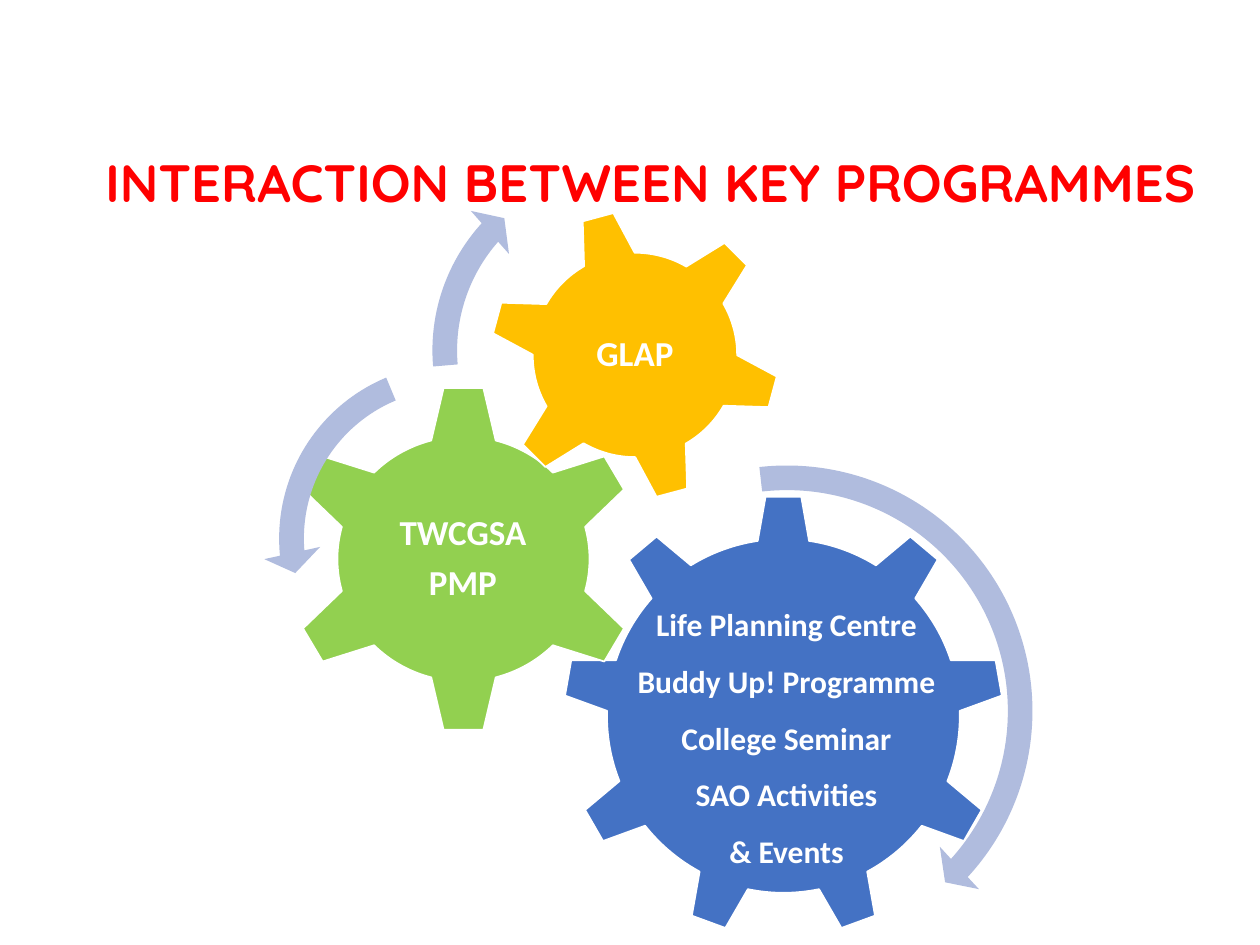
from pptx import Presentation
from pptx.dml.color import RGBColor
from pptx.enum.shapes import MSO_SHAPE as Preset
from pptx.enum.text import MSO_ANCHOR as Anchor, PP_ALIGN as Align
from pptx.util import Emu, Pt

EMU_PER_PX = 914400 / 126
ADJUSTMENT_PER_DEGREE = 0.6
WHITE = "FFFFFF"
RED = "FF0000"
BLUE = "4472C4"
GREEN = "92D050"
GOLD = "FFC000"
LAVENDER = "B0BCDE"


def px(length):
    return Emu(round(length * EMU_PER_PX))


def color(hex_value):
    return RGBColor.from_string(hex_value)


class GearSlide:
    def __init__(self, deck, font="Calibri"):
        self.slide = deck.slides.add_slide(deck.slide_layouts[6])
        self.font = font

    def preset(self, kind, box, fill):
        shape = self.slide.shapes.add_shape(kind, *map(px, box))
        shape.shadow.inherit = False
        shape.fill.solid()
        shape.fill.fore_color.rgb = color(fill)
        return shape

    def gear(self, kind, box, fill, rotation=0):
        gear = self.preset(kind, box, fill)
        gear.line.color.rgb = color(WHITE)
        gear.line.width = Pt(1)
        gear.rotation = rotation

    def arrow(self, kind, box, band, head_angle, end, start, head):
        arrow = self.preset(kind, box, LAVENDER)
        arrow.line.fill.background()
        angles = [angle * ADJUSTMENT_PER_DEGREE for angle in (head_angle, end, start)]
        for index, value in enumerate([band / 100, *angles, head / 100]):
            arrow.adjustments[index] = value

    def text(self, box, lines, size, fill=WHITE, font=None, align=Align.CENTER,
             spacing=0.9, after=0, inset=None):
        frame = self.slide.shapes.add_textbox(*map(px, box)).text_frame
        frame.word_wrap = True
        frame.vertical_anchor = Anchor.MIDDLE
        if inset is not None:
            frame.margin_left = frame.margin_right = px(inset)
            frame.margin_top = frame.margin_bottom = px(inset)
        for index, line in enumerate(lines):
            paragraph = frame.add_paragraph() if index else frame.paragraphs[0]
            paragraph.alignment = align
            paragraph.line_spacing = spacing
            paragraph.space_after = Pt(after)
            run = paragraph.add_run()
            run.text = line
            run.font.name = font or self.font
            run.font.size = Pt(size)
            run.font.bold = True
            run.font.color.rgb = color(fill)

    def gear_label(self, box, lines):
        self.text(box, lines, 20, after=7, inset=4)


def main():
    deck = Presentation()
    deck.slide_width, deck.slide_height = px(1260), px(945)
    page = GearSlide(deck)

    page.gear(Preset.GEAR_9, (563, 495, 441, 442), BLUE)
    page.gear(Preset.GEAR_6, (285, 384, 357, 350), GREEN)
    page.gear_label((374, 473, 178, 173), ["TWCGSA", "PMP"])
    page.gear(Preset.GEAR_6, (489, 209, 292, 292), GOLD, rotation=345)
    page.gear_label((553, 273, 164, 164), ["GLAP"])

    page.arrow(Preset.CIRCULAR_ARROW, (525, 449, 524, 524),
               band=4.7, head_angle=4.98, end=42.32, start=263.55, head=5.5)
    page.arrow(Preset.LEFT_CIRCULAR_ARROW, (263, 348, 381, 381),
               band=6.5, head_angle=7.17, end=174.82, start=247.3, head=7.5)
    page.arrow(Preset.CIRCULAR_ARROW, (416, 145, 411, 411),
               band=6, head_angle=6.57, end=221.9, start=175.14, head=7)

    page.text((93, 136, 1167, 100), ["INTERACTION BETWEEN KEY PROGRAMMES"], 30,
              fill=RED, font="Quicksand", align=Align.LEFT)
    programmes = ["Life Planning Centre", "Buddy Up! Programme", "College Seminar",
                  "SAO Activities", "& Events"]
    page.text((621, 559, 331, 338), programmes, 18, spacing=1.5)

    deck.save("out.pptx")


if __name__ == "__main__":
    main()
